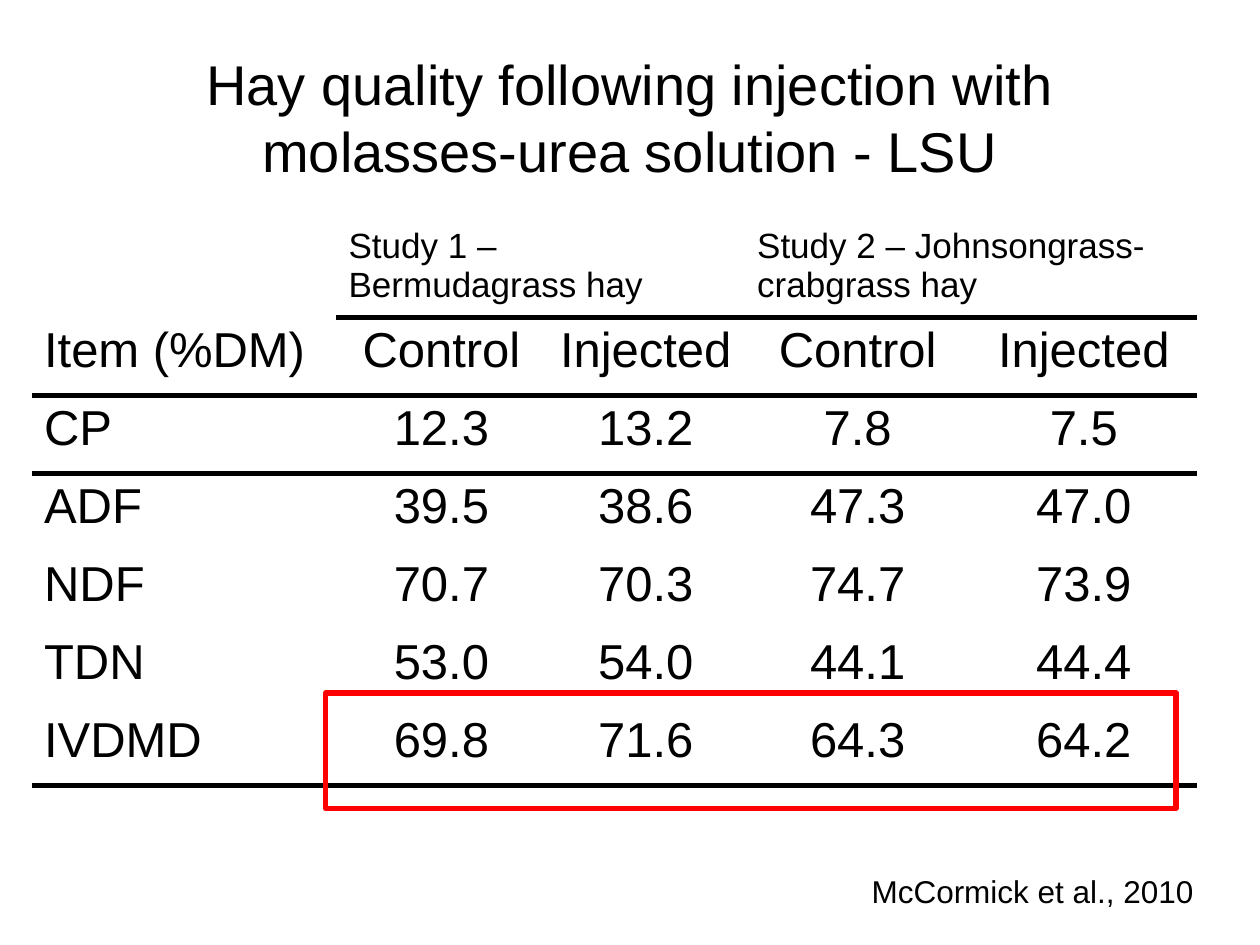
from dataclasses import dataclass

from lxml import etree
from pptx import Presentation
from pptx.dml.color import RGBColor
from pptx.enum.shapes import MSO_SHAPE
from pptx.enum.text import MSO_ANCHOR, MSO_AUTO_SIZE, PP_ALIGN
from pptx.oxml.ns import qn
from pptx.util import Pt

LEFT, CENTER = PP_ALIGN.LEFT, PP_ALIGN.CENTER
MIDDLE = MSO_ANCHOR.MIDDLE
FIT_SHAPE = MSO_AUTO_SIZE.SHAPE_TO_FIT_TEXT
RECTANGLE = MSO_SHAPE.RECTANGLE
PLAIN_TABLE = "{2D5ABB26-0587-4C30-8999-92F81FD0307C}"


@dataclass(frozen=True)
class Theme:
    font: str = "Arial"
    ink: str = "000000"
    accent: str = "FF0000"
    title: int = 32
    body: int = 28
    study: int = 20
    citation: int = 18
    rule: int = 3


THEME = Theme()

COLUMN_WIDTHS = (174, 120.5, 113, 129.25, 129.25)
ROW_HEIGHT = 44.6
STUDIES = {1: "Study 1 – Bermudagrass hay", 3: "Study 2 – Johnsongrass-crabgrass hay"}
HAY_QUALITY = (
    ("Item (%DM)", "Control", "Injected", "Control", "Injected"),
    ("CP", "12.3", "13.2", "7.8", "7.5"),
    ("ADF", "39.5", "38.6", "47.3", "47.0"),
    ("NDF", "70.7", "70.3", "74.7", "73.9"),
    ("TDN", "53.0", "54.0", "44.1", "44.4"),
    ("IVDMD", "69.8", "71.6", "64.3", "64.2"),
)


def write(frame, text, size, align=LEFT):
    frame.text = text
    paragraph = frame.paragraphs[0]
    paragraph.alignment = align
    for run in paragraph.runs:
        run.font.name = THEME.font
        run.font.size = Pt(size)
        run.font.color.rgb = RGBColor.from_string(THEME.ink)


def add_title(slide, left, top, width, height):
    title = slide.shapes.add_textbox(Pt(left), Pt(top), Pt(width), Pt(height)).text_frame
    title.word_wrap = True
    title.vertical_anchor = MIDDLE
    write(title, "Hay quality following injection with molasses-urea solution - LSU",
          THEME.title, CENTER)


def add_rule(cell, side):
    rule = etree.SubElement(cell._tc.get_or_add_tcPr(), qn(f"a:{side}"), w=str(Pt(THEME.rule)))
    fill = etree.SubElement(rule, qn("a:solidFill"))
    etree.SubElement(fill, qn("a:srgbClr"), val=THEME.ink)


def add_quality_table(slide, left, top, width):
    row_count = len(HAY_QUALITY) + 1
    last_row = row_count - 1
    table = slide.shapes.add_table(row_count, len(COLUMN_WIDTHS), Pt(left), Pt(top),
                                   Pt(width), Pt(ROW_HEIGHT * row_count)).table
    table.first_row = table.horz_banding = False
    table._tbl.tblPr.find(qn("a:tableStyleId")).text = PLAIN_TABLE
    for column, column_width in zip(table.columns, COLUMN_WIDTHS):
        column.width = Pt(column_width)
    for row in table.rows:
        row.height = Pt(ROW_HEIGHT)

    for row in range(row_count):
        for column in range(len(COLUMN_WIDTHS)):
            cell = table.cell(row, column)
            if row == 2 or (row == 1 and column):
                add_rule(cell, "lnT")
            if row in (1, last_row) or (row == 0 and column):
                add_rule(cell, "lnB")
            cell.fill.background()

    for column, study in STUDIES.items():
        heading = table.cell(0, column)
        heading.merge(table.cell(0, column + 1))
        write(heading.text_frame, study, THEME.study)
    for row, values in enumerate(HAY_QUALITY, start=1):
        for column, value in enumerate(values):
            write(table.cell(row, column).text_frame, value, THEME.body,
                  CENTER if column else LEFT)


def add_citation(slide, left, top, width, height):
    citation = slide.shapes.add_textbox(Pt(left), Pt(top), Pt(width), Pt(height)).text_frame
    citation.word_wrap = False
    citation.auto_size = FIT_SHAPE
    write(citation, "McCormick et al., 2010", THEME.citation)


def add_highlight(slide, left, top, width, height):
    highlight = slide.shapes.add_shape(RECTANGLE, Pt(left), Pt(top), Pt(width), Pt(height))
    highlight.shadow.inherit = False
    highlight.fill.background()
    highlight.line.color.rgb = RGBColor.from_string(THEME.accent)
    highlight.line.width = Pt(THEME.rule)


def main():
    presentation = Presentation()
    presentation.slide_width, presentation.slide_height = Pt(720), Pt(540)
    slide = presentation.slides.add_slide(presentation.slide_layouts[6])
    add_title(slide, 36, 21.6, 648, 90)
    add_quality_table(slide, 18, 126, 666)
    add_citation(slide, 491, 494.6, 203.8, 28.8)
    add_highlight(slide, 186, 396, 486, 66)
    presentation.save("out.pptx")


if __name__ == "__main__":
    main()
